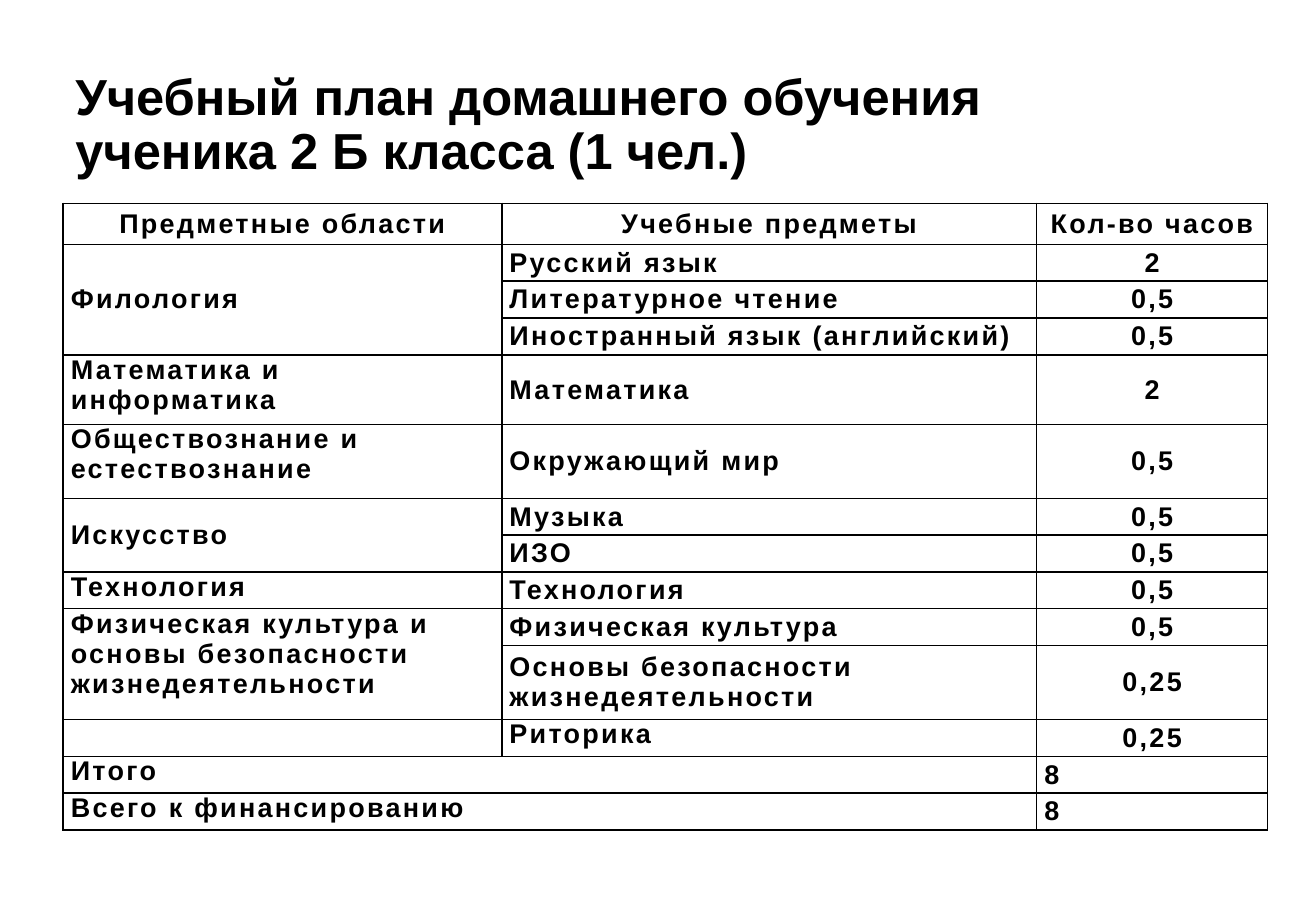
from lxml import etree
from pptx import Presentation
from pptx.enum import text
from pptx.oxml import ns
from pptx.util import Cm, Pt
from pptx.dml.color import RGBColor

COLORS = {"ink": "000000", "paper": "FFFFFF"}
FONT = "Arial"


def write_text(frame, content, size, align=text.PP_ALIGN.LEFT, line_spacing=None, tracking=None):
    """Fill a text frame with one bold paragraph; newlines become line breaks."""
    paragraph = frame.paragraphs[0]
    paragraph.text = content
    paragraph.alignment = align
    paragraph.line_spacing = line_spacing
    for run in paragraph.runs:
        run.font.name = FONT
        run.font.size = Pt(size)
        run.font.bold = True
        run.font.color.rgb = RGBColor.from_string(COLORS["ink"])
        if tracking:
            run.font._element.set("spc", str(round(tracking * 100)))


def add_borders(cell, width):
    properties = cell._tc.get_or_add_tcPr()
    for side in ("lnL", "lnR", "lnT", "lnB"):
        line = etree.SubElement(properties, ns.qn(f"a:{side}"), w=str(Pt(width)))
        fill = etree.SubElement(line, ns.qn("a:solidFill"))
        etree.SubElement(fill, ns.qn("a:srgbClr"), val=COLORS["ink"])


presentation = Presentation()
presentation.slide_width = Cm(27.51)
presentation.slide_height = Cm(19.05)
slide = presentation.slides.add_slide(presentation.slide_layouts[5])

title = slide.shapes.title
title.left, title.top, title.width, title.height = Cm(1.32), Cm(1.02), Cm(24.43), Cm(3.23)
title.text_frame.auto_size = text.MSO_AUTO_SIZE.NONE
title.text_frame.vertical_anchor = text.MSO_ANCHOR.MIDDLE
write_text(title.text_frame, "Учебный план домашнего обучения\nученика 2 Б класса (1 чел.)",
           size=30, line_spacing=0.9)

# None continues the cell above (first column) or to the left (second column)
curriculum = [
    ("Предметные области", "Учебные предметы", "Кол-во часов"),
    ("Филология", "Русский язык", "2"),
    (None, "Литературное чтение", "0,5"),
    (None, "Иностранный язык (английский)", "0,5"),
    ("Математика и информатика", "Математика", "2"),
    ("Обществознание и естествознание", "Окружающий мир", "0,5"),
    ("Искусство", "Музыка", "0,5"),
    (None, "ИЗО", "0,5"),
    ("Технология", "Технология", "0,5"),
    ("Физическая культура и основы безопасности жизнедеятельности", "Физическая культура", "0,5"),
    (None, "Основы безопасности жизнедеятельности", "0,25"),
    ("", "Риторика", "0,25"),
    ("Итого", None, "8"),
    ("Всего к финансированию", None, "8"),
]
column_widths = [9.17, 11.18, 4.83]
usual_height = 0.77
special_heights = {0: 0.86, 4: 1.46, 5: 1.54, 10: 1.54}
row_heights = [special_heights.get(row, usual_height) for row in range(len(curriculum))]
middle_areas = {"Предметные области", "Филология", "Искусство"}

table = slide.shapes.add_table(
    len(curriculum), len(column_widths), Cm(1.32), Cm(4.25),
    Cm(sum(column_widths)), Cm(sum(row_heights))).table
table.first_row = False
table.horz_banding = False
for column, width in zip(table.columns, column_widths):
    column.width = Cm(width)
for row, height in zip(table.rows, row_heights):
    row.height = Cm(height)

for row, entries in enumerate(curriculum):
    for column, entry in enumerate(entries):
        cell = table.cell(row, column)
        cell.margin_left = cell.margin_right = Cm(0.16)
        cell.margin_top = cell.margin_bottom = 0
        at_top = entry == "Риторика" or (column == 0 and entry not in middle_areas)
        cell.vertical_anchor = text.MSO_ANCHOR.TOP if at_top else text.MSO_ANCHOR.MIDDLE
        add_borders(cell, width=1)
        cell.fill.solid()
        cell.fill.fore_color.rgb = RGBColor.from_string(COLORS["paper"])
        if entry:
            is_total = entries[1] is None
            centred = row == 0 or (column == 2 and not is_total)
            write_text(cell.text_frame, entry, size=16, tracking=1.4,
                       align=text.PP_ALIGN.CENTER if centred else text.PP_ALIGN.LEFT)

area_row = 0
for row, (area, subject, hours) in enumerate(curriculum):
    if area is not None:
        area_row = row
    next_area = curriculum[row + 1][0] if row + 1 < len(curriculum) else ""
    if row > area_row and next_area is not None:
        table.cell(area_row, 0).merge(table.cell(row, 0))
    if subject is None:
        table.cell(row, 0).merge(table.cell(row, 1))

presentation.save("out.pptx")
